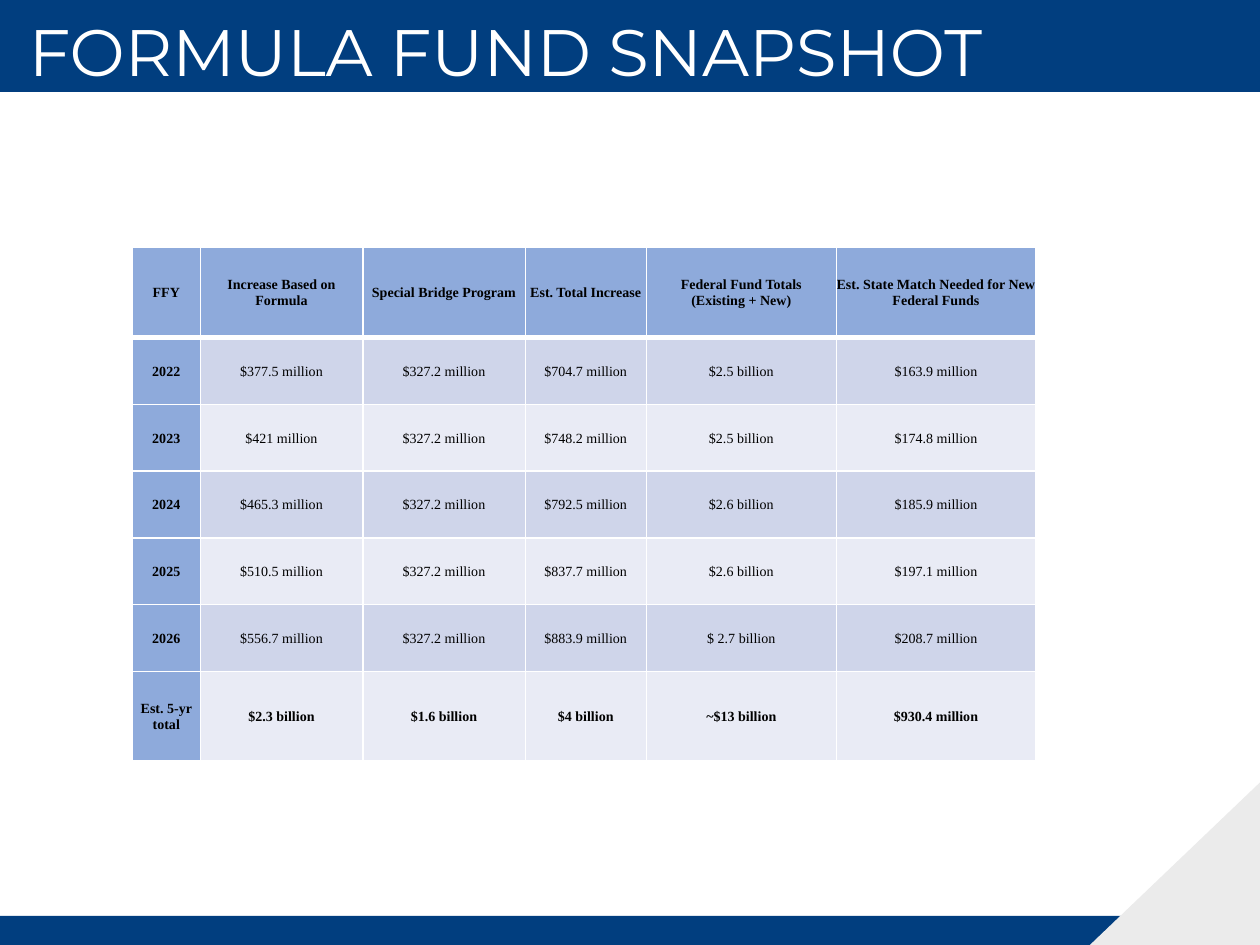
from lxml.etree import SubElement
from pptx import Presentation
from pptx.dml.color import RGBColor
from pptx.enum.shapes import MSO_SHAPE
from pptx.enum.text import MSO_ANCHOR, PP_ALIGN
from pptx.oxml.ns import qn
from pptx.util import Inches, Pt

TITLE = "FORMULA FUND SNAPSHOT"
NAVY, GREY, WHITE, BLACK = "013E7F", "EBEBEB", "FFFFFF", "000000"
HEAD, BANDS = "8EAADB", ("E9EBF5", "CFD5EA")
SHAPES = [
    (MSO_SHAPE.RECTANGLE, (0, 7.27, 10, 0.23), NAVY),
    (MSO_SHAPE.RIGHT_TRIANGLE, (8.65, 6.21, 1.35, 1.29), GREY),
    (MSO_SHAPE.RECTANGLE, (0, 0, 10, 0.73), NAVY),
]
ROWS = [
    ("FFY", "Increase Based on Formula", "Special Bridge Program", "Est. Total Increase",
     "Federal Fund Totals\v(Existing + New)", "Est. State Match Needed for New Federal Funds"),
    ("2022", "$377.5 million", "$327.2 million", "$704.7 million", "$2.5 billion", "$163.9 million"),
    ("2023", "$421 million", "$327.2 million", "$748.2 million", "$2.5 billion", "$174.8 million"),
    ("2024", "$465.3 million", "$327.2 million", "$792.5 million", "$2.6 billion", "$185.9 million"),
    ("2025", "$510.5 million", "$327.2 million", "$837.7 million", "$2.6 billion", "$197.1 million"),
    ("2026", "$556.7 million", "$327.2 million", "$883.9 million", "$ 2.7 billion", "$208.7 million"),
    ("Est. 5-yr total", "$2.3 billion", "$1.6 billion", "$4 billion", "~$13 billion", "$930.4 million"),
]
WIDTHS = [0.54, 1.29, 1.29, 0.96, 1.51, 1.58]
HEIGHTS = [0.72] + [0.53] * 5 + [0.71]


def paint(fill, color):
    """Fill with one solid colour."""
    fill.solid()
    fill.fore_color.rgb = RGBColor.from_string(color)


def style(para, name, size, color, bold=False):
    """Set the font of a paragraph."""
    font = para.font
    font.name, font.size, font.bold = name, Pt(size), bold
    font.color.rgb = RGBColor.from_string(color)


def border(cell, row):
    """Draw white cell borders, thick below the header row."""
    props = cell._tc.get_or_add_tcPr()
    thick = {(0, "B"), (1, "T")}
    for side in "LRTB":
        width = Pt(3 if (row, side) in thick else 1)
        line = SubElement(props, qn(f"a:ln{side}"), w=str(width))
        SubElement(SubElement(line, qn("a:solidFill")), qn("a:srgbClr"), val=WHITE)


def add_shapes(slide):
    """Add the bars and the corner."""
    for kind, box, color in SHAPES:
        shape = slide.shapes.add_shape(kind, *map(Inches, box))
        shape.shadow.inherit = False
        paint(shape.fill, color)
        shape.line.fill.background()
        if kind == MSO_SHAPE.RIGHT_TRIANGLE:
            shape.element.spPr.xfrm.set("flipH", "1")


def add_funds(slide):
    """Add the table of funds by year."""
    box = (1.05, 1.96, sum(WIDTHS), sum(HEIGHTS))
    table = slide.shapes.add_table(len(ROWS), len(WIDTHS), *map(Inches, box)).table
    for col, width in zip(table.columns, WIDTHS):
        col.width = Inches(width)
    for r, (row, height) in enumerate(zip(ROWS, HEIGHTS)):
        table.rows[r].height = Inches(height)
        for c, text in enumerate(row):
            cell = table.cell(r, c)
            cell.text = text
            cell.vertical_anchor = MSO_ANCHOR.MIDDLE
            cell.margin_left = cell.margin_right = cell.margin_top = cell.margin_bottom = 0
            border(cell, r)
            paint(cell.fill, HEAD if r == 0 or c == 0 else BANDS[r % 2])
            para = cell.text_frame.paragraphs[0]
            para.alignment, para.line_spacing = PP_ALIGN.CENTER, 1.07
            style(para, "Times New Roman", 8, BLACK, c == 0 or r in (0, len(ROWS) - 1))


def add_title(slide):
    """Add the title over the top bar."""
    frame = slide.shapes.add_textbox(*map(Inches, (0.13, 0.11, 9.72, 0.8))).text_frame
    frame.word_wrap = True
    frame.text = TITLE
    para = frame.paragraphs[0]
    para.line_spacing = 0.9
    style(para, "Montserrat", 37.5, WHITE)


def main():
    """Build and save the slide."""
    deck = Presentation()
    deck.slide_width, deck.slide_height = Inches(10), Inches(7.5)
    slide = deck.slides.add_slide(deck.slide_layouts[6])
    add_shapes(slide)
    add_funds(slide)
    add_title(slide)
    deck.save("out.pptx")


if __name__ == "__main__":
    main()
